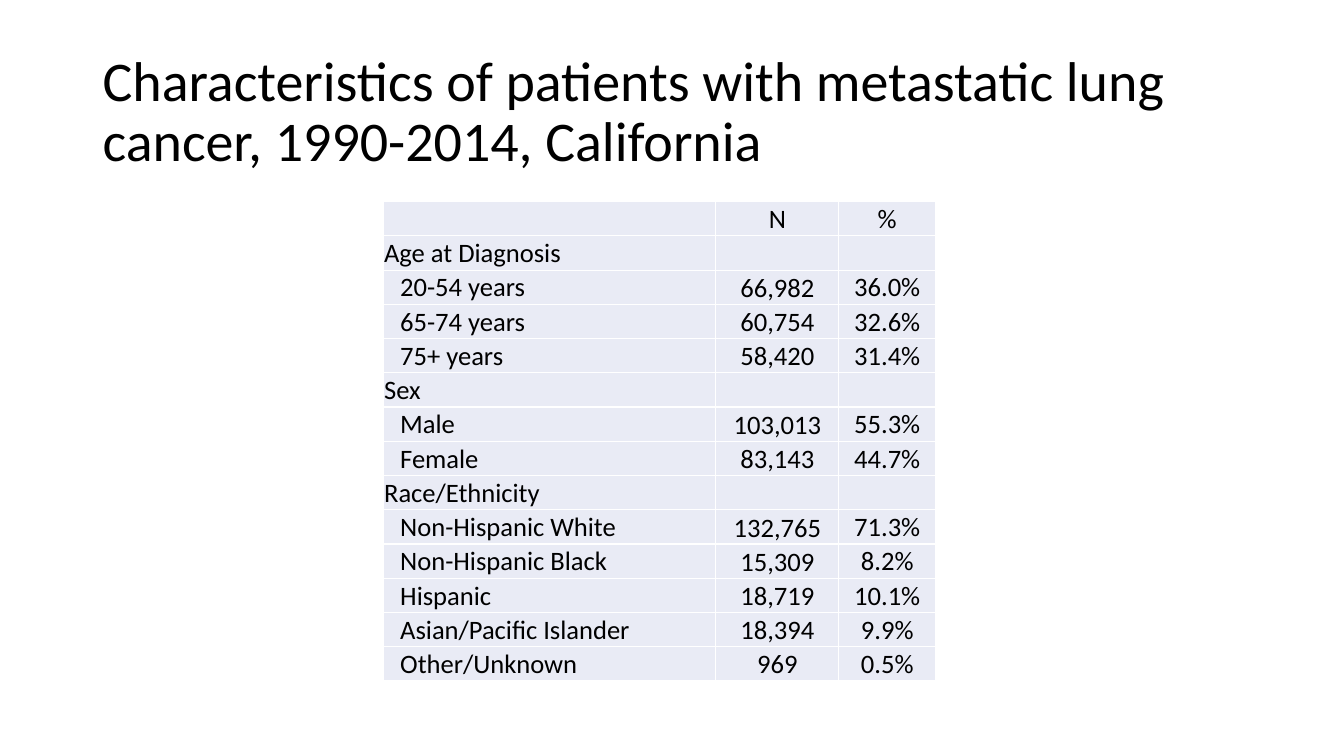
"""Build a slide with a table of lung cancer patient characteristics."""
from dataclasses import dataclass

from lxml import etree
from pptx import Presentation
from pptx.dml.color import RGBColor
from pptx.enum.text import MSO_ANCHOR, PP_ALIGN
from pptx.oxml.ns import qn
from pptx.util import Inches, Pt

MIDDLE, BOTTOM = MSO_ANCHOR.MIDDLE, MSO_ANCHOR.BOTTOM
LEFT, CENTER = PP_ALIGN.LEFT, PP_ALIGN.CENTER
FONT = "Calibri"
COLORS = {"text": "000000", "cell": "E9EBF5", "border": "FFFFFF"}
TITLE = "Characteristics of patients with metastatic lung cancer, 1990-2014, California"
WIDTHS = (3.3, 1.22, 0.96)
HEIGHT = 0.34
PAD = 0.01
INDENT = 0.17


@dataclass(frozen=True)
class Row:
    label: str
    count: str = ""
    share: str = ""
    anchor: MSO_ANCHOR = BOTTOM


ROWS = (
    Row("", "N", "%", MIDDLE),
    Row("Age at Diagnosis"),
    Row("20-54 years", "66,982", "36.0%"),
    Row("65-74 years", "60,754", "32.6%"),
    Row("75+ years", "58,420", "31.4%"),
    Row("Sex"),
    Row("Male", "103,013", "55.3%"),
    Row("Female", "83,143", "44.7%"),
    Row("Race/Ethnicity"),
    Row("Non-Hispanic White", "132,765", "71.3%"),
    Row("Non-Hispanic Black", "15,309", "8.2%"),
    Row("Hispanic", "18,719", "10.1%"),
    Row("Asian/Pacific Islander", "18,394", "9.9%"),
    Row("Other/Unknown", "969", "0.5%", MIDDLE),
)


def style_text(frame, size: float, align: PP_ALIGN) -> None:
    """Format every run and align every paragraph in a text frame."""
    for para in frame.paragraphs:
        para.alignment = align
        for run in para.runs:
            run.font.name = FONT
            run.font.size = Pt(size)
            run.font.color.rgb = RGBColor.from_string(COLORS["text"])


def add_border(cell) -> None:
    """Draw a thin line on all four sides of a cell."""
    props = cell._tc.get_or_add_tcPr()
    for side in ("a:lnL", "a:lnR", "a:lnT", "a:lnB"):
        line = etree.SubElement(props, qn(side), w=str(Pt(1)))
        fill = etree.SubElement(line, qn("a:solidFill"))
        etree.SubElement(fill, qn("a:srgbClr"), val=COLORS["border"])


def fill_cell(cell, text: str, align: PP_ALIGN, anchor: MSO_ANCHOR, left: float) -> None:
    """Write and style one table cell."""
    cell.text_frame.text = text
    style_text(cell.text_frame, 19, align)
    cell.vertical_anchor = anchor
    cell.margin_left = Inches(left)
    cell.margin_right = cell.margin_top = Inches(PAD)
    cell.margin_bottom = 0
    add_border(cell)
    cell.fill.solid()
    cell.fill.fore_color.rgb = RGBColor.from_string(COLORS["cell"])


def add_title(slide) -> None:
    """Add the slide heading."""
    box = slide.shapes.add_textbox(Inches(0.92), Inches(0.4), Inches(11.5), Inches(1.45))
    frame = box.text_frame
    frame.word_wrap = True
    frame.vertical_anchor = MIDDLE
    frame.text = TITLE
    frame.paragraphs[0].line_spacing = 0.9
    style_text(frame, 40, LEFT)


def add_grid(slide) -> None:
    """Add the table of patient counts and shares."""
    table = slide.shapes.add_table(
        len(ROWS), len(WIDTHS), Inches(3.8), Inches(2),
        Inches(sum(WIDTHS)), Inches(HEIGHT * len(ROWS))).table
    table.first_row = table.horz_banding = False
    for col, width in zip(table.columns, WIDTHS):
        col.width = Inches(width)
    for index, row in enumerate(ROWS):
        table.rows[index].height = Inches(HEIGHT)
        label, count, share = table.rows[index].cells
        fill_cell(label, row.label, LEFT, MIDDLE, INDENT if row.count else PAD)
        fill_cell(count, row.count, CENTER, row.anchor, PAD)
        fill_cell(share, row.share, CENTER, MIDDLE, PAD)


def main() -> None:
    """Create and save the presentation."""
    deck = Presentation()
    deck.slide_width, deck.slide_height = Inches(13.33), Inches(7.5)
    slide = deck.slides.add_slide(deck.slide_layouts[6])
    add_title(slide)
    add_grid(slide)
    deck.save("out.pptx")


if __name__ == "__main__":
    main()
